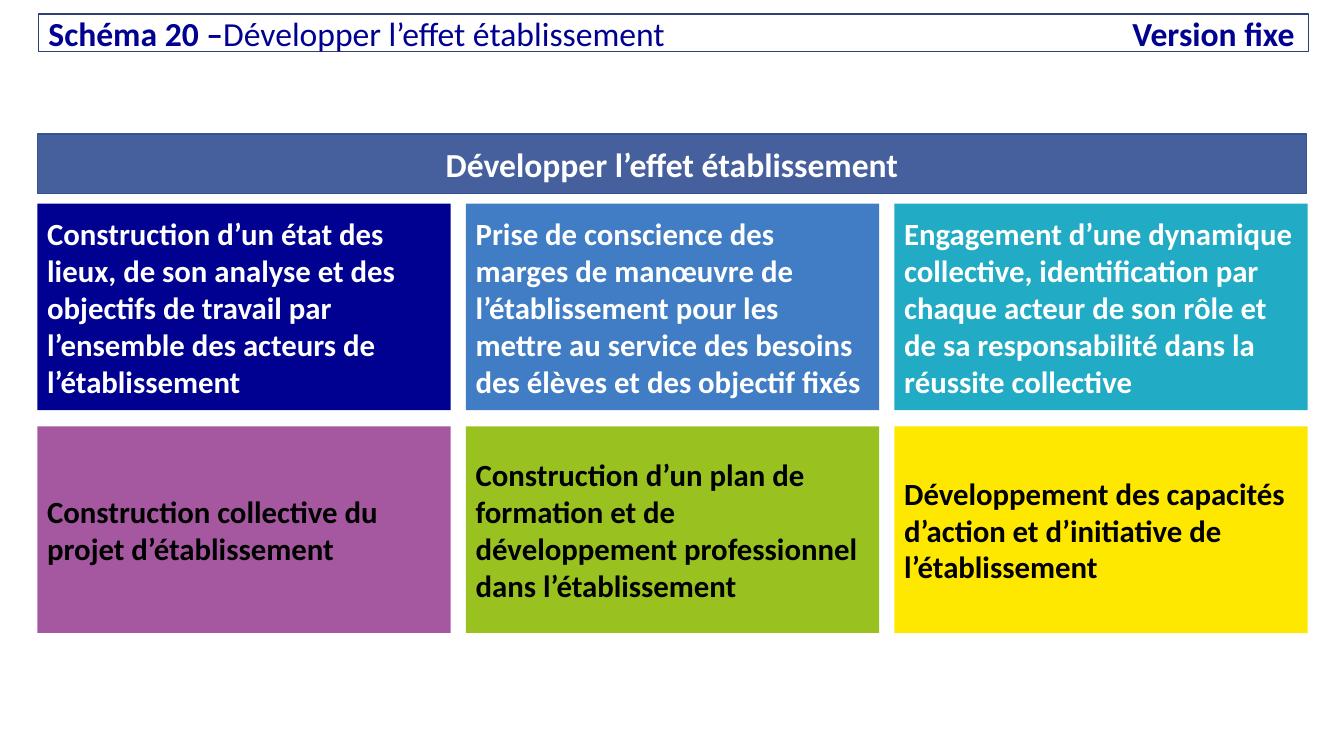
"""Build the slide on developing the school effect."""
from lxml import etree
from pptx import Presentation
from pptx.dml.color import RGBColor
from pptx.enum.shapes import MSO_SHAPE
from pptx.enum.text import MSO_ANCHOR, MSO_AUTO_SIZE, PP_ALIGN
from pptx.oxml.ns import qn
from pptx.util import Inches, Pt

RECT = MSO_SHAPE.RECTANGLE
MIDDLE = MSO_ANCHOR.MIDDLE
FIXED = MSO_AUTO_SIZE.NONE
LEFT, CENTER = PP_ALIGN.LEFT, PP_ALIGN.CENTER

NAVY, WHITE, BLACK = "000091", "FFFFFF", "000000"
HEAD = [
    ("Schéma 20 –", True),
    ("Développer l’effet établissement\t", False),
    ("Version fixe", True),
]
BANNER = "Développer l’effet établissement"
ROWS = [
    (WHITE, [
        ("Construction d’un état des lieux, de son analyse et des objectifs "
         "de travail par l’ensemble des acteurs de l’établissement", NAVY),
        ("Prise de conscience des marges de manœuvre de l’établissement pour "
         "les mettre au service des besoins des élèves et des objectif fixés",
         "417DC4"),
        ("Engagement d’une dynamique collective, identification par chaque "
         "acteur de son rôle et de sa responsabilité dans la réussite "
         "collective", "21ABC4"),
    ]),
    (BLACK, [
        ("Construction collective du projet d’établissement", "A558A0"),
        ("Construction d’un plan de formation et de développement "
         "professionnel dans l’établissement", "99C221"),
        ("Développement des capacités d’action et d’initiative de "
         "l’établissement", "FFE800"),
    ]),
]
EDGE, TOP, WIDE, HIGH = 0.37, 2.02, 4.1, 2.05
STEP_X, STEP_Y = 4.25, 2.21


def color(code):
    return RGBColor.from_string(code)


def border(shape, code):
    shape.line.color.rgb = color(code)
    shape.line.width = Pt(1)


def write(shape, runs, size, ink, align=LEFT):
    frame = shape.text_frame
    frame.word_wrap = True
    frame.auto_size = FIXED
    frame.vertical_anchor = MIDDLE
    para = frame.paragraphs[0]
    para.alignment = align
    for text, bold in runs:
        run = para.add_run()
        run.text = text
        font = run.font
        font.name, font.size, font.bold = "Calibri", Pt(size), bold
        font.color.rgb = color(ink)
    return para


def box(slide, x, y, w, h, fill):
    shape = slide.shapes.add_shape(RECT, *map(Inches, (x, y, w, h)))
    shape.shadow.inherit = False
    shape.fill.solid()
    shape.fill.fore_color.rgb = color(fill)
    shape.line.fill.background()
    return shape


def main():
    deck = Presentation()
    deck.slide_width, deck.slide_height = Inches(13.33), Inches(7.5)
    slide = deck.slides.add_slide(deck.slide_layouts[5])

    title = slide.shapes.title
    title.left, title.top = Inches(0.38), Inches(0.14)
    title.width, title.height = Inches(12.6), Inches(0.37)
    border(title, "2F4077")
    para = write(title, HEAD, 24, NAVY)
    tabs = etree.SubElement(para._p.get_or_add_pPr(), qn("a:tabLst"))
    etree.SubElement(tabs, qn("a:tab"), pos=str(Inches(12.36)), algn="r")

    banner = box(slide, EDGE, 1.33, 12.59, 0.59, "465F9D")
    border(banner, "325491")
    write(banner, [(BANNER, True)], 24, WHITE, CENTER)

    for row, (ink, cells) in enumerate(ROWS):
        for col, (text, fill) in enumerate(cells):
            x, y = EDGE + col * STEP_X, TOP + row * STEP_Y
            card = box(slide, x, y, WIDE, HIGH, fill)
            write(card, [(text, True)], 22, ink)

    deck.save("out.pptx")


if __name__ == "__main__":
    main()
